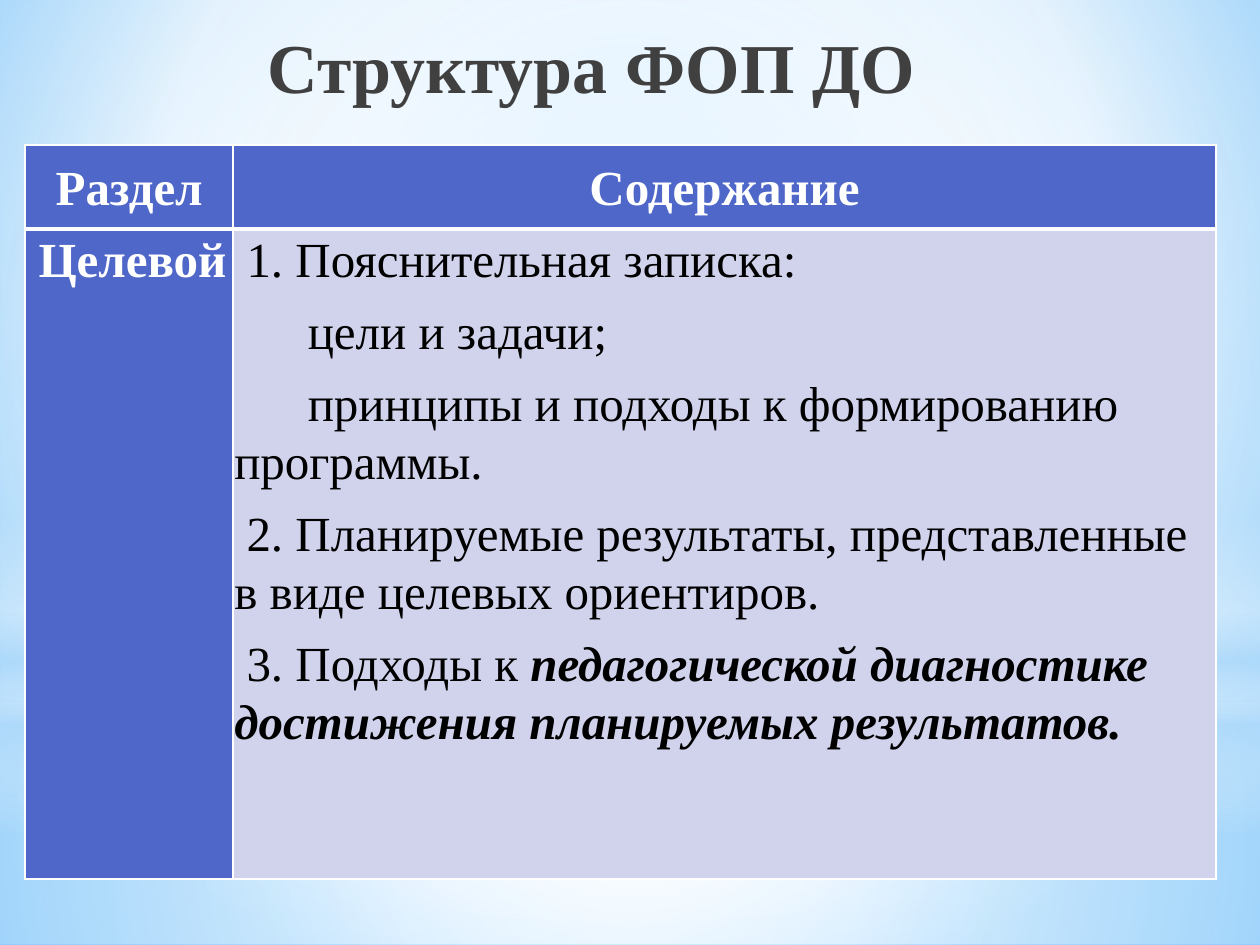
import pptx
import pptx.dml.color
import pptx.enum.shapes
import pptx.enum.text
import pptx.oxml
import pptx.oxml.ns
import pptx.util

Pt = pptx.util.Pt
RGBColor = pptx.dml.color.RGBColor
MSO_SHAPE = pptx.enum.shapes.MSO_SHAPE
PP_ALIGN = pptx.enum.text.PP_ALIGN
MSO_ANCHOR = pptx.enum.text.MSO_ANCHOR

WHITE = RGBColor(0xFF, 0xFF, 0xFF)
BLACK = RGBColor(0x00, 0x00, 0x00)
CHARCOAL = RGBColor(0x40, 0x40, 0x40)
INDIGO = RGBColor(0x4E, 0x67, 0xC8)
LAVENDER = RGBColor(0xD0, 0xD3, 0xEB)
MIST = RGBColor(0xB4, 0xDC, 0xFA)
SKY = RGBColor(0x9E, 0xD5, 0xFF)
AZURE = RGBColor(0x5B, 0xB9, 0xFF)

FONT = "Times New Roman"
CENTRE = (50, 50, 50, 50)
SPACE = 7  # width of a space at 28 pt


class SlideBuilder:
    def __init__(self, slide):
        self.slide = slide
        self.font = {"name": FONT, "size": Pt(28)}

    def gradient(self, fill, element, stops, focus=None):
        """Stops are (position, colour, opacity) in percent; no focus means top to bottom."""
        fill.gradient()
        gradient = element.find(".//" + pptx.oxml.ns.qn("a:gradFill"))
        stop_xml = "".join(
            f'<a:gs pos="{position * 1000}"><a:srgbClr val="{color}">'
            f'<a:alpha val="{opacity * 1000}"/></a:srgbClr></a:gs>'
            for position, color, opacity in stops)
        if focus:
            sides = " ".join(f'{side}="{value * 1000}"' for side, value in zip("ltrb", focus))
            direction = f'<a:path path="circle"><a:fillToRect {sides}/></a:path>'
        else:
            direction = '<a:lin ang="5400000" scaled="0"/>'
        gradient.getparent().replace(gradient, pptx.oxml.parse_xml(
            f'<a:gradFill {pptx.oxml.ns.nsdecls("a")} rotWithShape="1">'
            f'<a:gsLst>{stop_xml}</a:gsLst>{direction}</a:gradFill>'))

    def background(self, stops, focus):
        fill = self.slide.background.fill
        self.gradient(fill, self.slide.element, stops, focus)

    def glow(self, kind, top, height, stops, focus=None):
        """Full-width soft band or ellipse."""
        shape = self.slide.shapes.add_shape(kind, Pt(0), Pt(top), Pt(720), Pt(height))
        shape.shadow.inherit = False
        shape.line.fill.background()
        self.gradient(shape.fill, shape.element, stops, focus)

    def title(self, text, left, top, width, height):
        title = self.slide.shapes.title
        title.element.getparent().append(title.element)  # bring to front
        box = {"left": left, "top": top, "width": width, "height": height}
        for name, value in box.items():
            setattr(title, name, Pt(value))
        title.text_frame.vertical_anchor = MSO_ANCHOR.MIDDLE
        paragraph = title.text_frame.paragraphs[0]
        paragraph.alignment = PP_ALIGN.RIGHT
        self.run(paragraph, text, CHARCOAL, size=Pt(40), bold=True)

    def run(self, paragraph, text, color, **formats):
        run = paragraph.add_run()
        run.text = text
        for name, value in {**self.font, **formats}.items():
            setattr(run.font, name, value)
        run.font.color.rgb = color

    def table(self, left, top, widths, heights):
        frame = self.slide.shapes.add_table(
            len(heights), len(widths), Pt(left), Pt(top), Pt(sum(widths)), Pt(sum(heights)))
        for column, width in zip(frame.table.columns, widths):
            column.width = Pt(width)
        for row, height in zip(frame.table.rows, heights):
            row.height = Pt(height)
        return frame.table

    def cell(self, cell, fill, borders, paragraphs, color, **formats):
        """Paragraphs are (indent, [(text, run formats), ...])."""
        properties = cell._tc.get_or_add_tcPr()
        for side, width in borders.items():
            properties.append(pptx.oxml.parse_xml(
                f'<a:ln{side} {pptx.oxml.ns.nsdecls("a")} w="{Pt(width)}"><a:solidFill>'
                f'<a:srgbClr val="{WHITE}"/></a:solidFill></a:ln{side}>'))
        cell.fill.solid()
        cell.fill.fore_color.rgb = fill
        for side in ("left", "top", "right", "bottom"):
            setattr(cell, f"margin_{side}", Pt(0.7))
        cell.vertical_anchor = formats.pop("anchor", MSO_ANCHOR.TOP)
        for index, (indent, runs) in enumerate(paragraphs):
            frame = cell.text_frame
            paragraph = frame.add_paragraph() if index else frame.paragraphs[0]
            for name, value in {"line_spacing": 1.07, **formats}.items():
                setattr(paragraph, name, value)
            paragraph._p.get_or_add_pPr().set("indent", str(Pt(indent)))
            for text, run_formats in runs:
                self.run(paragraph, text, color, **run_formats)


def main():
    presentation = pptx.Presentation()
    presentation.slide_width, presentation.slide_height = Pt(720), Pt(540)
    builder = SlideBuilder(presentation.slides.add_slide(presentation.slide_layouts[5]))

    builder.background([(0, SKY, 100), (60, WHITE, 100), (100, AZURE, 100)], (20, 10, 20, 60))
    builder.glow(MSO_SHAPE.RECTANGLE, 402, 138,
                 [(0, WHITE, 91), (37, WHITE, 76), (100, MIST, 79)], CENTRE)
    builder.glow(MSO_SHAPE.RECTANGLE, 0, 402,
                 [(0, WHITE, 89), (48, WHITE, 62), (100, MIST, 79)], CENTRE)
    builder.glow(MSO_SHAPE.RECTANGLE, 297, 180,
                 [(0, WHITE, 0), (29, WHITE, 30), (45, MIST, 40),
                  (55, WHITE, 26), (65, MIST, 60), (100, WHITE, 0)])
    builder.glow(MSO_SHAPE.OVAL, 126, 402, [(0, WHITE, 100), (56, WHITE, 0)], CENTRE)

    builder.title("Структура ФОП ДО", 127.5, 7, 402.5, 61)

    table = builder.table(14.4, 82.8, [118.8, 561.6], [48, 371.5])
    bold = {"bold": True}
    plain = {"bold": False}
    header_borders = {"L": 1, "R": 1, "T": 1, "B": 3}
    body_borders = {"L": 1, "R": 1, "T": 3, "B": 1}
    for column, heading in enumerate(["Раздел", "Содержание"]):
        builder.cell(table.cell(0, column), INDIGO, header_borders, [(0, [(heading, bold)])],
                     WHITE, anchor=MSO_ANCHOR.MIDDLE, alignment=PP_ALIGN.CENTER)
    builder.cell(table.cell(1, 0), INDIGO, body_borders, [(SPACE, [("Целевой", bold)])], WHITE)
    content = [
        (SPACE, [("1. Пояснительная записка:", plain)]),
        (6 * SPACE, [("цели и задачи;", plain)]),
        (6 * SPACE, [("принципы и подходы к формированию программы.", plain)]),
        (SPACE, [("2. Планируемые результаты, представленные в виде целевых ориентиров.", plain)]),
        (SPACE, [("3. Подходы к ", plain),
                 ("педагогической диагностике достижения планируемых результатов.",
                  {"bold": True, "italic": True})]),
    ]
    builder.cell(table.cell(1, 1), LAVENDER, body_borders, content, BLACK, space_after=Pt(8))

    presentation.save("out.pptx")


if __name__ == "__main__":
    main()
